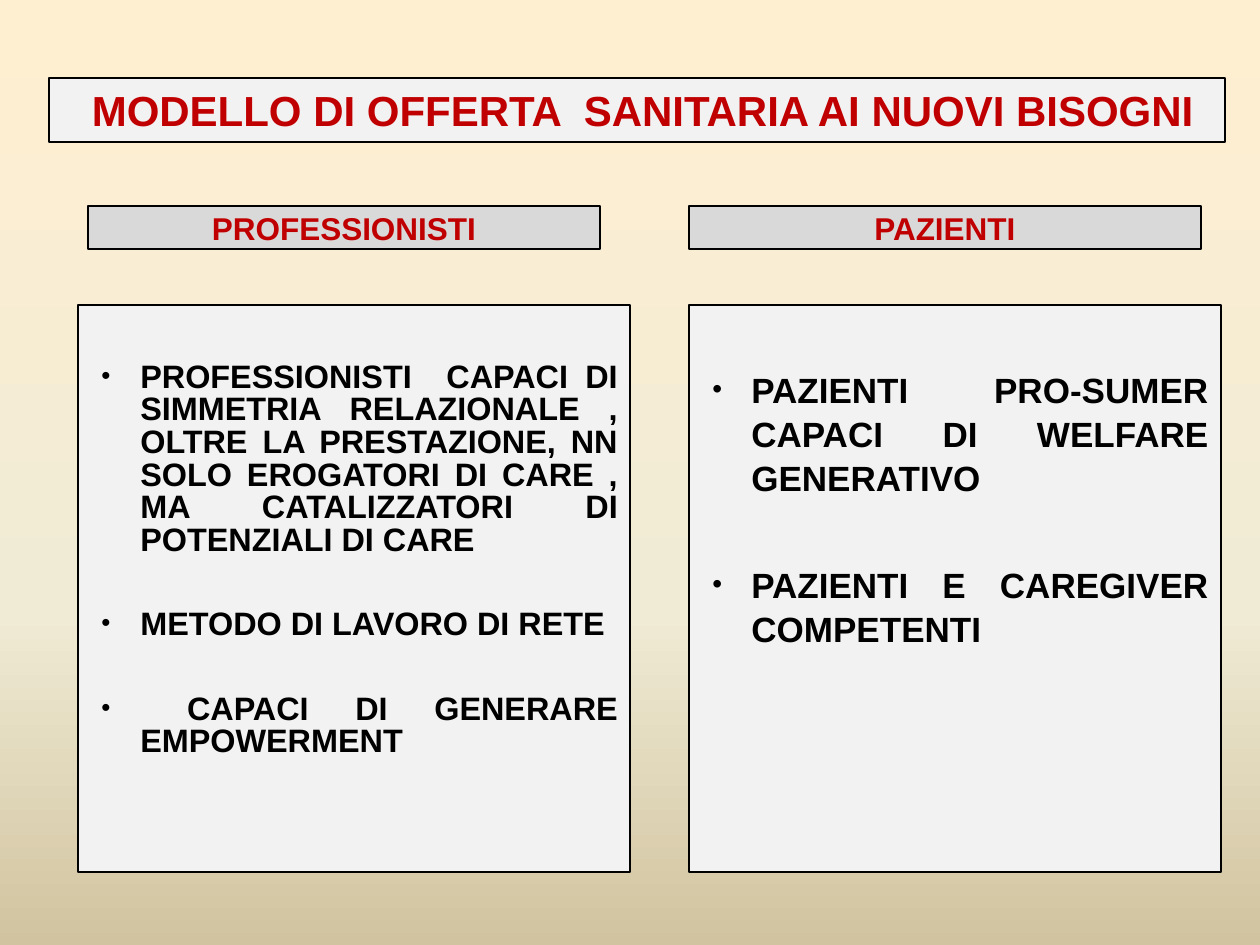
import copy

from lxml import etree
from pptx import Presentation
from pptx import util as u
from pptx.dml.color import RGBColor
from pptx.enum import shapes, text
from pptx.oxml.ns import qn

PX = 914400 // 126
FONT = "Arial"
COLORS = {
    "red": "C00000", "black": "000000", "panel": "F2F2F2", "header": "D9D9D9",
    "sky": "FFEFD1", "cream": "F0EBD5", "sand": "D1C39F",
}


def rgb(name):
    return RGBColor.from_string(COLORS[name])


class SlideBuilder:
    def __init__(self, presentation):
        self.slide = presentation.slides.add_slide(presentation.slide_layouts[5])

    def background(self, stops):
        fill = self.slide.background.fill
        fill.gradient()
        fill.gradient_angle = 270
        stop_list = self.slide.background._cSld.find(".//" + qn("a:gsLst"))
        stop_list.insert(1, copy.deepcopy(stop_list[0]))
        for stop, (position, color) in zip(fill.gradient_stops, stops):
            stop.position = position
            stop.color.rgb = rgb(color)

    def style_box(self, shape, fill, line_width):
        shape.fill.solid()
        shape.fill.fore_color.rgb = rgb(fill)
        shape.line.color.rgb = rgb("black")
        shape.line.width = u.Pt(line_width)
        shape.text_frame.word_wrap = True
        shape.text_frame.auto_size = text.MSO_AUTO_SIZE.NONE

    def box(self, left, top, width, height, fill, line_width):
        shape = self.slide.shapes.add_shape(
            shapes.MSO_SHAPE.RECTANGLE,
            left * PX, top * PX, width * PX, height * PX)
        shape.shadow.inherit = False
        self.style_box(shape, fill, line_width)
        return shape

    def style_text(self, paragraph, size, color, alignment):
        paragraph.alignment = alignment
        for run in paragraph.runs:
            run.font.name = FONT
            run.font.size = u.Pt(size)
            run.font.bold = True
            run.font.color.rgb = rgb(color)

    def label(self, shape, words, size):
        frame = shape.text_frame
        frame.text = words
        frame.vertical_anchor = text.MSO_ANCHOR.MIDDLE
        frame.margin_top = frame.margin_bottom = 0
        self.style_text(frame.paragraphs[0], size, "red", text.PP_ALIGN.CENTER)

    def title(self, left, top, width, height, words):
        shape = self.slide.shapes.title
        shape.left, shape.top = left * PX, top * PX
        shape.width, shape.height = width * PX, height * PX
        self.style_box(shape, "panel", 0.75)
        self.label(shape, words, 24)

    def header(self, left, top, width, height, words):
        self.label(self.box(left, top, width, height, "header", 1.5), words, 18)

    def bullet(self, paragraph):
        properties = paragraph._p.get_or_add_pPr()
        properties.set("marL", str(50 * PX))
        properties.set("indent", str(-39 * PX))
        color = etree.SubElement(properties, qn("a:buClr"))
        etree.SubElement(color, qn("a:srgbClr"), val=COLORS["black"])
        etree.SubElement(properties, qn("a:buSzPct"), val="80000")
        etree.SubElement(properties, qn("a:buFont"), typeface=FONT)
        etree.SubElement(properties, qn("a:buChar"), char="•")

    def panel(self, left, top, width, height, items, size, spacing, gap, inset):
        frame = self.box(left, top, width, height, "panel", 0.75).text_frame
        frame.vertical_anchor = text.MSO_ANCHOR.TOP
        frame.margin_top = inset * PX
        for index, words in enumerate(items):
            paragraph = frame.add_paragraph() if index else frame.paragraphs[0]
            paragraph.text = words
            paragraph.line_spacing = spacing
            paragraph.space_before = u.Pt(gap if index else 0)
            self.style_text(paragraph, size, "black", text.PP_ALIGN.JUSTIFY)
            self.bullet(paragraph)


def main():
    presentation = Presentation()
    presentation.slide_width = 1260 * PX
    presentation.slide_height = 945 * PX
    builder = SlideBuilder(presentation)
    builder.background([(0, "sky"), (0.65, "cream"), (1, "sand")])

    # Title
    builder.title(49, 78, 1176, 64,
                  " MODELLO DI OFFERTA  SANITARIA AI NUOVI BISOGNI")

    # Column headers
    for left, words in ((88, "PROFESSIONISTI"), (689, "PAZIENTI")):
        builder.header(left, 206, 512, 43, words)

    # Bullet panels
    builder.panel(78, 305, 552, 567, [
        "PROFESSIONISTI  CAPACI DI SIMMETRIA RELAZIONALE , OLTRE LA "
        "PRESTAZIONE, NN SOLO EROGATORI DI CARE , MA CATALIZZATORI DI "
        "POTENZIALI DI CARE",
        "METODO DI LAVORO DI RETE",
        " CAPACI DI GENERARE EMPOWERMENT",
    ], size=18.5, spacing=0.84, gap=29.5, inset=57)
    builder.panel(689, 305, 532, 567, [
        "PAZIENTI PRO-SUMER CAPACI DI WELFARE GENERATIVO",
        "PAZIENTI E CAREGIVER COMPETENTI",
    ], size=20, spacing=1.05, gap=36, inset=61)

    presentation.save("out.pptx")


if __name__ == "__main__":
    main()
